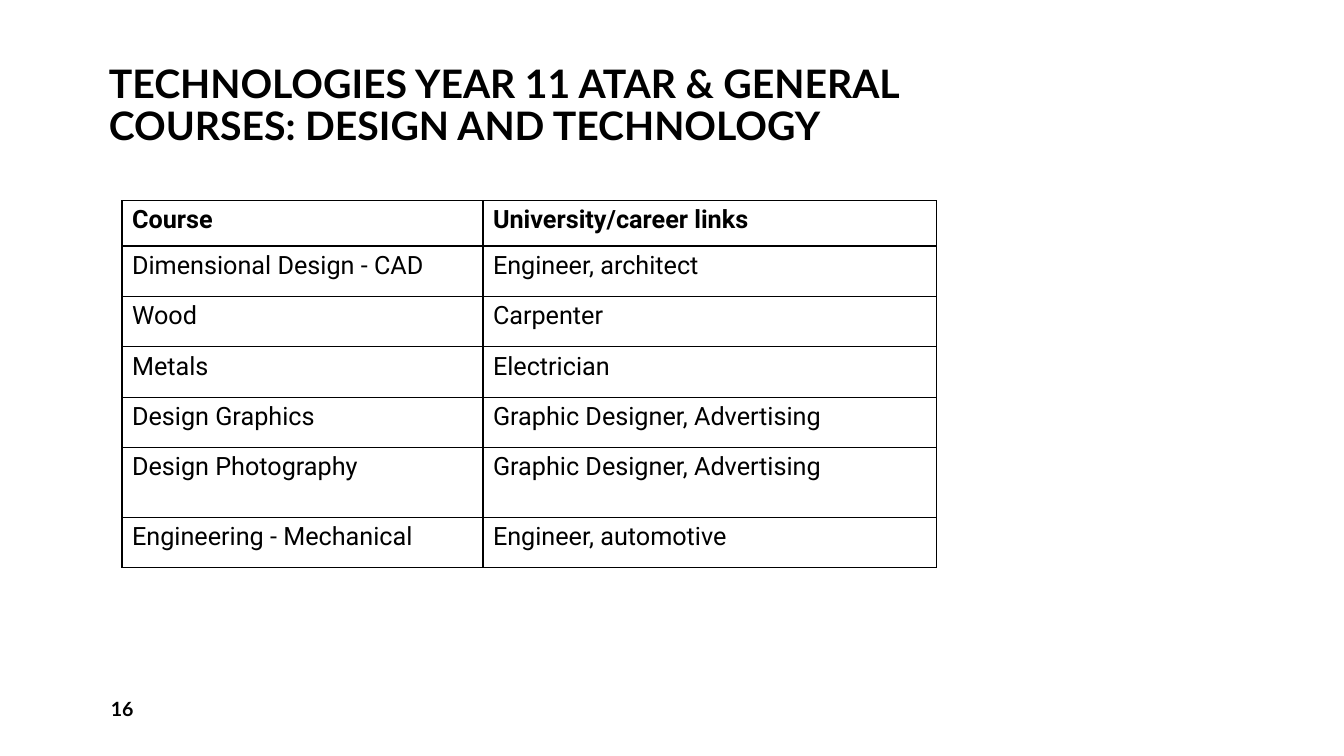
from pptx import Presentation
from pptx.dml.color import RGBColor
from pptx.enum.text import MSO_ANCHOR, PP_ALIGN
from pptx.oxml import parse_xml
from pptx.oxml.ns import nsdecls
from pptx.util import Inches, Pt

BLACK = "000000"


def write(frame, text, font_name, size, bold):
    paragraph = frame.paragraphs[0]
    paragraph.alignment = PP_ALIGN.LEFT
    run = paragraph.add_run()
    run.text = text
    values = {"name": font_name, "size": Pt(size), "bold": bold}
    for attribute, value in values.items():
        setattr(run.font, attribute, value)
    run.font.color.rgb = RGBColor.from_string(BLACK)


def add_borders(cell):
    for side in ("lnL", "lnR", "lnT", "lnB"):
        cell._tc.get_or_add_tcPr().append(parse_xml(
            f'<a:{side} {nsdecls("a")} w="{Pt(1)}"><a:solidFill>'
            f'<a:srgbClr val="{BLACK}"/></a:solidFill></a:{side}>'))


prs = Presentation()
prs.slide_width, prs.slide_height = Inches(13.33), Inches(7.5)
slide = prs.slides.add_slide(prs.slide_layouts[5])

# Title
title = slide.shapes.title
title.left, title.top = Inches(0.98), Inches(0.08)
title.width, title.height = Inches(9.07), Inches(1.45)
title.text_frame.vertical_anchor = MSO_ANCHOR.BOTTOM
title.text_frame.word_wrap = True
write(title.text_frame,
      "TECHNOLOGIES YEAR 11 ATAR & GENERAL COURSES: DESIGN AND TECHNOLOGY",
      "Lato", 28, True)
title.text_frame.paragraphs[0].line_spacing = 0.9

# Courses and where they lead
courses = [
    ("Course", "University/career links"),
    ("Dimensional Design - CAD", "Engineer, architect"),
    ("Wood", "Carpenter"),
    ("Metals", "Electrician"),
    ("Design Graphics", "Graphic Designer, Advertising"),
    ("Design Photography", "Graphic Designer, Advertising"),
    ("Engineering - Mechanical", "Engineer, automotive"),
]
row_heights = [0.45, 0.5, 0.5, 0.5, 0.5, 0.69, 0.5]
column_widths = [3.58, 4.5]
course_table = slide.shapes.add_table(
    len(courses), len(column_widths), Inches(1.21), Inches(1.99),
    Inches(sum(column_widths)), Inches(sum(row_heights))).table
course_table.horz_banding = False
for column, width in zip(course_table.columns, column_widths):
    column.width = Inches(width)
for r, (course, height) in enumerate(zip(courses, row_heights)):
    course_table.rows[r].height = Inches(height)
    for c, text in enumerate(course):
        cell = course_table.cell(r, c)
        add_borders(cell)
        cell.fill.background()
        write(cell.text_frame, text, "Roboto", 18, r == 0)

# Page number
page_number = slide.shapes.add_textbox(
    Inches(1), Inches(6.83), Inches(2.92), Inches(0.4)).text_frame
page_number.word_wrap = True
page_number.vertical_anchor = MSO_ANCHOR.MIDDLE
write(page_number, "16", "Lato", 14, True)

prs.save("out.pptx")
